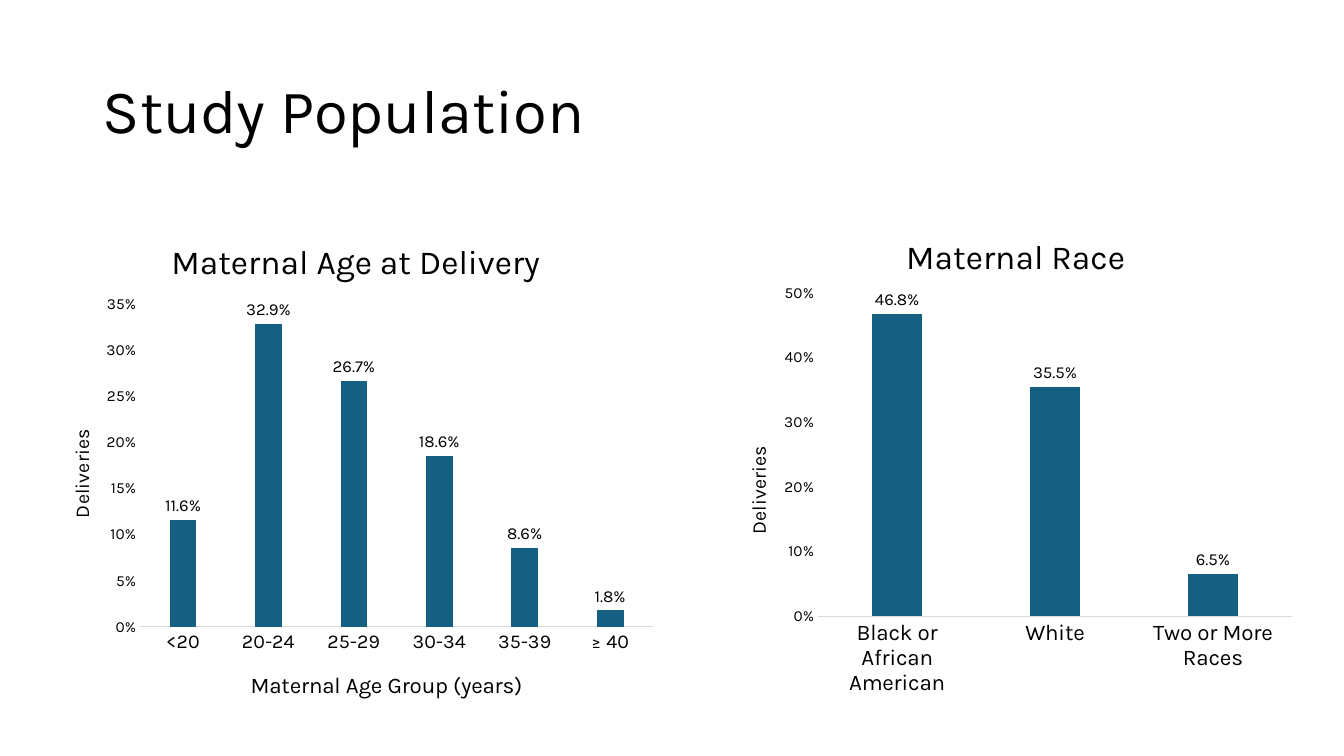
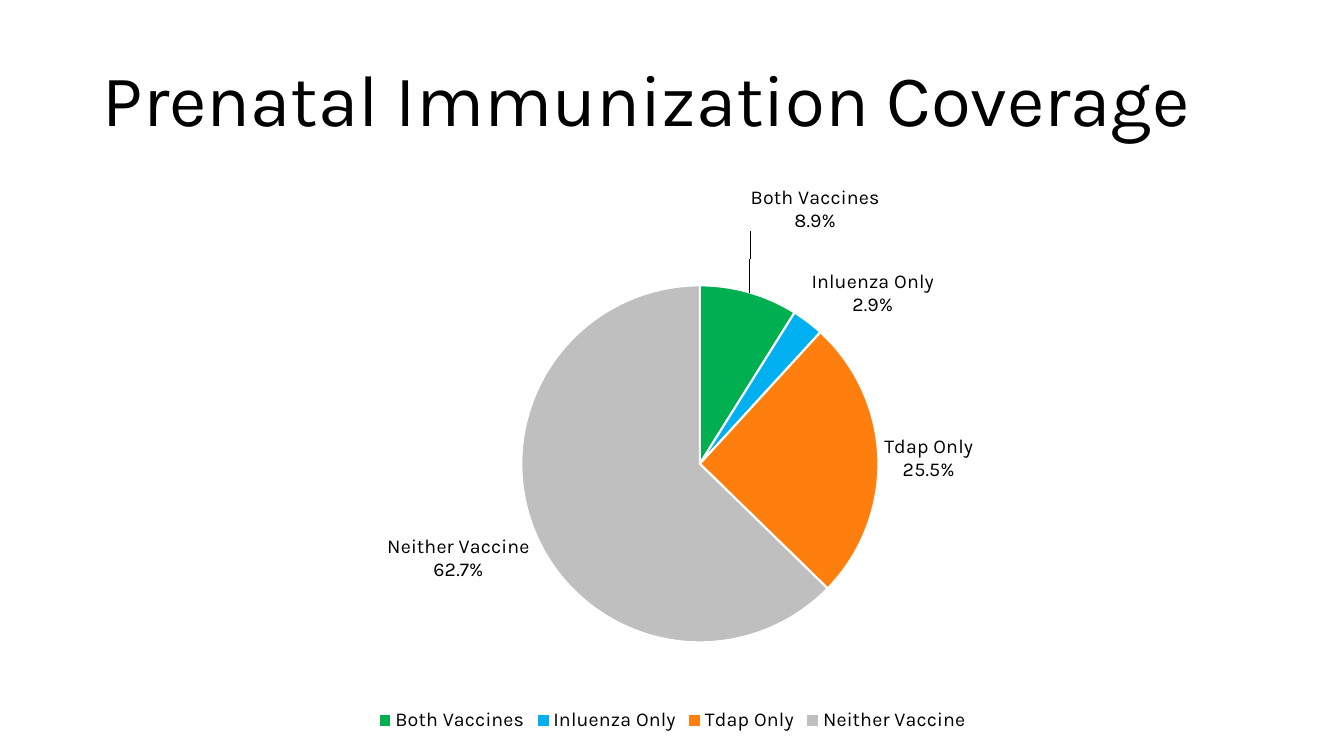
import dataclasses

import pptx
import pptx.chart.data
import pptx.dml.color
import pptx.enum.chart
import pptx.enum.text
import pptx.oxml
import pptx.oxml.ns
import pptx.util

Inches = pptx.util.Inches
qn = pptx.oxml.ns.qn
XL = pptx.enum.chart


@dataclasses.dataclass(frozen=True)
class Theme:
    font: str = "Karla"
    text: str = "000000"
    bar: str = "156082"
    axis: str = "D9D9D9"
    edge: str = "FFFFFF"
    slices: tuple = ("00B050", "00B0F0", "FF7F0E", "BFBFBF")
    chart_title: int = 24
    axis_title: int = 14
    legend: int = 14
    ticks: int = 11
    bar_label: int = 12
    base: int = 10


THEME = Theme()


def rgb(value):
    return pptx.dml.color.RGBColor.from_string(value)


def style_font(font, size):
    font.name = THEME.font
    font.size = pptx.util.Pt(size)
    font.bold = False
    font.color.rgb = rgb(THEME.text)


def add_run(p, text, size):
    r = p.add_run()
    r.text = text
    style_font(r.font, size)


def add_title_slide(prs, text, top, height, size):
    s = prs.slides.add_slide(prs.slide_layouts[5])
    sp = s.shapes.title
    sp.left, sp.top = Inches(0.92), Inches(top)
    sp.width, sp.height = Inches(11.5), Inches(height)
    tf = sp.text_frame
    tf.word_wrap = True
    tf.auto_size = pptx.enum.text.MSO_AUTO_SIZE.NONE
    tf.vertical_anchor = pptx.enum.text.MSO_ANCHOR.MIDDLE
    p = tf.paragraphs[0]
    p.alignment = pptx.enum.text.PP_ALIGN.LEFT
    p.line_spacing = 0.9
    add_run(p, text, size)
    return s


def set_layout(parent, index, x, y, w=None, h=None):
    old = parent.find(qn("c:layout"))
    if old is not None:
        parent.remove(old)
    items = []
    if w is not None:
        items.append(("layoutTarget", "inner"))
    if parent.tag != qn("c:dLbl"):
        items += [("xMode", "edge"), ("yMode", "edge")]
    items += [("x", x), ("y", y)]
    if w is not None:
        items += [("w", w), ("h", h)]
    body = "".join(f'<c:{tag} val="{val}"/>' for tag, val in items)
    parent.insert(index, pptx.oxml.parse_xml(
        f'<c:layout {pptx.oxml.ns.nsdecls("c")}>'
        f"<c:manualLayout>{body}</c:manualLayout></c:layout>"))


def set_chart_text(title, text, size, place):
    add_run(title.text_frame.paragraphs[0], text, size)
    set_layout(title.element, 1, *place)


def add_chart(s, kind, box, cats, vals, plot):
    data = pptx.chart.data.CategoryChartData()
    data.categories = cats
    data.add_series("Series 1", vals)
    chart = s.shapes.add_chart(kind, *map(Inches, box), data).chart
    style_font(chart.font, THEME.base)
    chart.has_legend = False
    chart.has_title = False
    set_layout(chart.element.find(".//" + qn("c:plotArea")), 0, *plot)
    return chart


def style_labels(labels, size):
    labels.number_format = "0.0%"
    labels.number_format_is_linked = False
    labels.position = XL.XL_LABEL_POSITION.OUTSIDE_END
    style_font(labels.font, size)


def style_axis(axis, size):
    axis.has_major_gridlines = False
    axis.major_tick_mark = axis.minor_tick_mark = XL.XL_TICK_MARK.NONE
    style_font(axis.tick_labels.font, size)


def add_bar_chart(s, box, title, title_at, cats, vals, plot, top, step,
                  cat_size, value_title_at):
    chart = add_chart(s, XL.XL_CHART_TYPE.COLUMN_CLUSTERED, box, cats, vals, plot)
    set_chart_text(chart.chart_title, title, THEME.chart_title, title_at)
    bars = chart.plots[0]
    bars.gap_width, bars.overlap = 219, -27
    bars.vary_by_categories = False
    fill = bars.series[0].format.fill
    fill.solid()
    fill.fore_color.rgb = rgb(THEME.bar)
    bars.has_data_labels = True
    bars.data_labels.show_value = True
    style_labels(bars.data_labels, THEME.bar_label)

    style_axis(chart.category_axis, cat_size)
    line = chart.category_axis.format.line
    line.color.rgb = rgb(THEME.axis)
    line.width = pptx.util.Pt(0.75)

    value = chart.value_axis
    style_axis(value, THEME.ticks)
    value.format.line.fill.background()
    value.minimum_scale, value.maximum_scale, value.major_unit = 0, top, step
    value.tick_labels.number_format = "0%"
    value.tick_labels.number_format_is_linked = False
    set_chart_text(value.axis_title, "Deliveries", THEME.axis_title, value_title_at)
    return chart


def move_label(labels, idx, dx, dy):
    flags = "".join(
        f'<c:{tag} val="{val}"/>' for tag, val in (
            ("dLblPos", "outEnd"), ("showLegendKey", 0), ("showVal", 0),
            ("showCatName", 1), ("showSerName", 0), ("showPercent", 1),
            ("showBubbleSize", 0)))
    label = pptx.oxml.parse_xml(
        f'<c:dLbl {pptx.oxml.ns.nsdecls("c")}><c:idx val="{idx}"/>{flags}'
        "<c:separator>\n</c:separator></c:dLbl>")
    set_layout(label, 1, dx, dy)
    labels.insert(idx, label)


def add_pie_chart(s, box, cats, vals, plot, offsets):
    chart = add_chart(s, XL.XL_CHART_TYPE.PIE, box, cats, vals, plot)
    chart.has_legend = True
    chart.legend.position = XL.XL_LEGEND_POSITION.BOTTOM
    chart.legend.include_in_layout = False
    style_font(chart.legend.font, THEME.legend)
    series = chart.plots[0].series[0]
    for idx, color in enumerate(THEME.slices):
        fmt = series.points[idx].format
        fmt.fill.solid()
        fmt.fill.fore_color.rgb = rgb(color)
        fmt.line.color.rgb = rgb(THEME.edge)
        fmt.line.width = pptx.util.Pt(1.5)
    labels = series.data_labels
    style_labels(labels, THEME.legend)
    labels.show_value = False
    labels.show_category_name = labels.show_percentage = True
    element = series.data_labels._element
    separator = pptx.oxml.parse_xml(
        f'<c:separator {pptx.oxml.ns.nsdecls("c")}>\n</c:separator>')
    anchor = element.find(qn("c:showBubbleSize"))
    if anchor is None:
        anchor = element.find(qn("c:showPercent"))
    anchor.addnext(separator)
    for idx, (dx, dy) in enumerate(offsets):
        move_label(element, idx, dx, dy)


def main():
    prs = pptx.Presentation()
    prs.slide_width, prs.slide_height = Inches(13.33), Inches(7.5)

    s = add_title_slide(prs, "Study Population", 0.4, 1.45, 44)
    age = add_bar_chart(
        s, (0.4, 2.07, 6.2, 5), "Maternal Age at Delivery", (0.2, 0.05),
        ("<20", "20-24", "25-29", "30-34", "35-39", "≥ 40"),
        (0.116, 0.329, 0.267, 0.186, 0.086, 0.018),
        (0.16, 0.19, 0.82, 0.64), 0.35, 0.05, 14, (0.04, 0.43))
    set_chart_text(age.category_axis.axis_title, "Maternal Age Group (years)",
                   16, (0.33, 0.91))
    add_bar_chart(
        s, (7.13, 2.07, 5.8, 4.93), "Maternal Race", (0.31, 0.04),
        ("Black or African American", "White", "Two or More Races"),
        (0.468, 0.355, 0.065),
        (0.17, 0.17, 0.81, 0.65), 0.5, 0.1, 16, (0.04, 0.47))

    s = add_title_slide(prs, "Prenatal Immunization Coverage", 0.2, 1.65, 52)
    add_pie_chart(
        s, (2.79, 1.85, 7.76, 5.45),
        ("Both Vaccines", "Inluenza Only", "Tdap Only", "Neither Vaccine"),
        (8.9, 2.9, 25.5, 62.7), (0.29, 0.18, 0.49, 0.65),
        ((0, -0.1), (0, 0), (0, 0), (0, 0)))
    prs.save("out.pptx")


if __name__ == "__main__":
    main()
